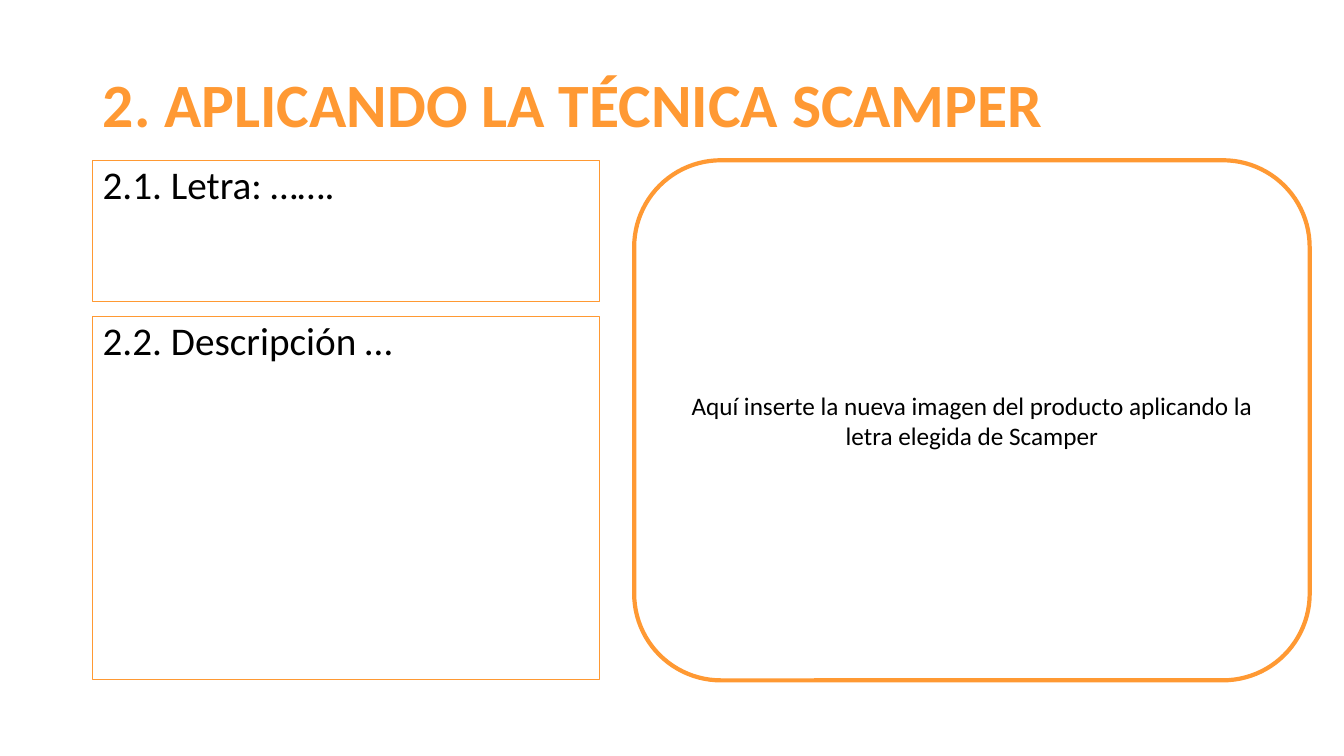
from pptx import Presentation
from pptx import util as u
from pptx.dml import color
from pptx.enum import shapes, text

ORANGE = "FF9933"
BLACK = "000000"
FONT = "Calibri"


def rgb(value):
    return color.RGBColor.from_string(value)


def write(shape, words, size, ink, anchor, align, bold=False, spacing=1.0, before=0):
    frame = shape.text_frame
    frame.word_wrap = True
    frame.auto_size = text.MSO_AUTO_SIZE.NONE
    frame.vertical_anchor = anchor
    para = frame.paragraphs[0]
    para.text = words
    para.alignment = align
    para.line_spacing = spacing
    para.space_before = u.Pt(before)
    para.font.name = FONT
    para.font.size = u.Pt(size)
    para.font.bold = bold
    para.font.color.rgb = rgb(ink)


def add_outline(page, kind, box, width):
    shape = page.shapes.add_shape(kind, *map(u.Inches, box))
    shape.shadow.inherit = False
    shape.fill.background()
    shape.line.color.rgb = rgb(ORANGE)
    shape.line.width = u.Pt(width)
    return shape


def place_title(page, box, words):
    title = page.shapes.title
    title.left, title.top, title.width, title.height = map(u.Inches, box)
    write(title, words, 44, ORANGE, text.MSO_ANCHOR.MIDDLE, text.PP_ALIGN.LEFT,
          bold=True, spacing=0.9)


def add_answers(page, box, prompts, first_height, gap):
    left, top, width, height = box
    heights = [first_height, height - first_height - gap]
    for prompt, answer_height in zip(prompts, heights):
        answer = add_outline(page, shapes.MSO_SHAPE.RECTANGLE,
                             (left, top, width, answer_height), 0.75)
        write(answer, prompt, 28, BLACK, text.MSO_ANCHOR.TOP, text.PP_ALIGN.LEFT,
              spacing=0.9, before=10)
        top += answer_height + gap


def add_image_area(page, box, words):
    area = add_outline(page, shapes.MSO_SHAPE.ROUNDED_RECTANGLE, box, 3)
    write(area, words, 18, BLACK, text.MSO_ANCHOR.MIDDLE, text.PP_ALIGN.CENTER)


def main():
    deck = Presentation()
    deck.slide_width = u.Inches(13.33)
    deck.slide_height = u.Inches(7.5)
    page = deck.slides.add_slide(deck.slide_layouts[5])
    place_title(page, (0.92, 0.34, 11.5, 1.45), "2. APLICANDO LA TÉCNICA SCAMPER")
    add_answers(page, (0.92, 1.59, 5.03, 5.15),
                ["2.1. Letra: …….", "2.2. Descripción …"], 1.4, 0.15)
    add_image_area(page, (6.29, 1.59, 6.7, 5.16),
                   "Aquí inserte la nueva imagen del producto aplicando la "
                   "letra elegida de Scamper")
    deck.save("out.pptx")


if __name__ == "__main__":
    main()
